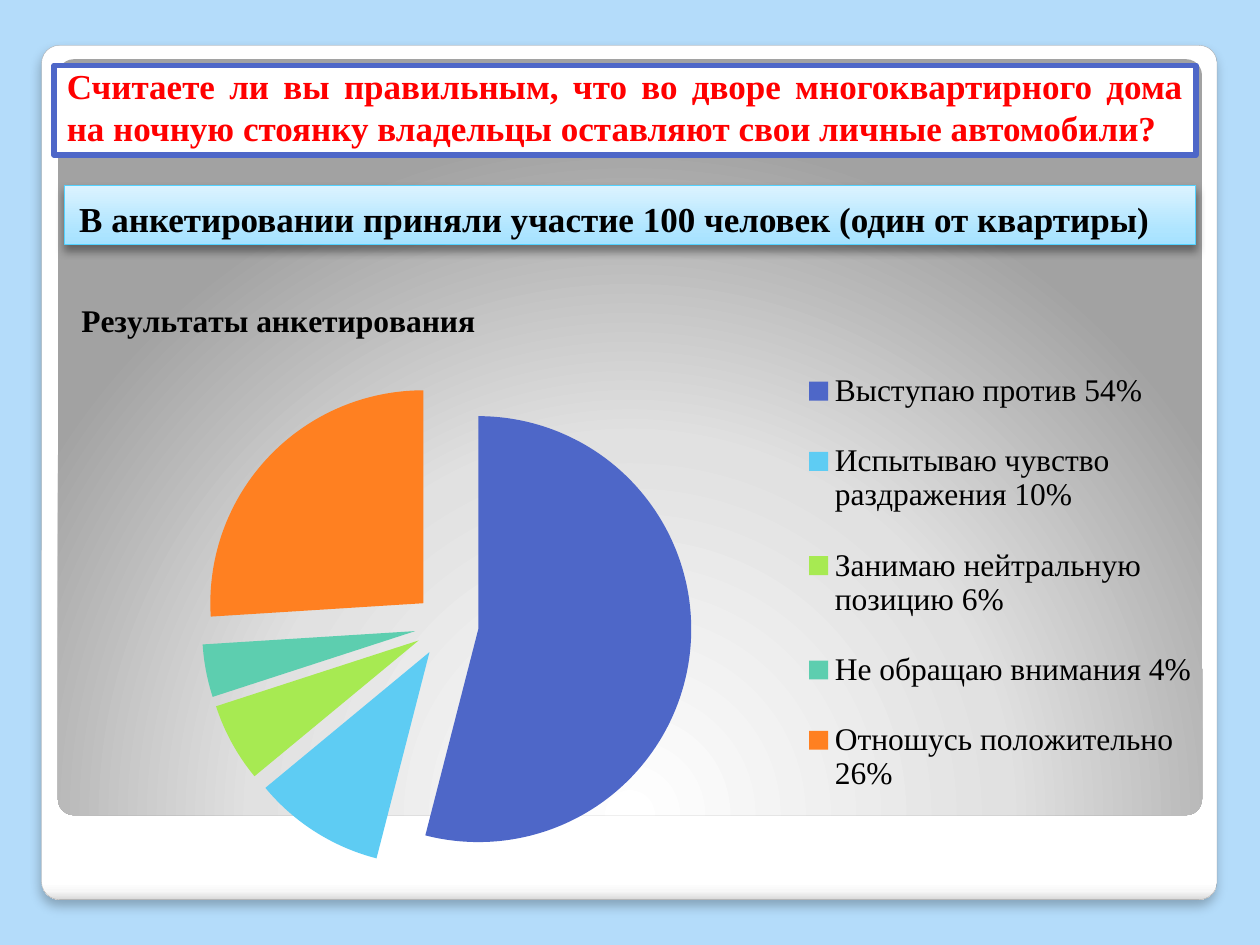
import pptx
import pptx.util
import pptx.chart.data
import pptx.dml.color
import pptx.enum.chart
import pptx.enum.shapes
import pptx.enum.text
import pptx.oxml
import pptx.oxml.ns
from pptx.util import Inches

TITLE = "Считаете ли вы правильным, что во дворе многоквартирного дома на ночную стоянку владельцы оставляют свои личные автомобили?"
NOTE = "В анкетировании приняли участие 100 человек (один от квартиры)"
HEAD = "Результаты анкетирования"
VOTES = [
    ("Выступаю против", 54, "4E67C8"),
    ("Испытываю чувство раздражения", 10, "5ECCF3"),
    ("Занимаю нейтральную позицию", 6, "A7EA52"),
    ("Не обращаю внимания", 4, "5DCEAF"),
    ("Отношусь положительно", 26, "FF8021"),
]
THEME = {
    "font": "Times New Roman", "big": 20, "mid": 18,
    "back": "B4DCFA", "white": "FFFFFF", "ink": "000000", "red": "FF0000",
    "frame": "4E67C8", "edge": "A4A4A4", "rim": "52D2FF",
    "card": [(0, "FFFFFF"), (98, "FFFFFF"), (99, "F7F7F7"), (100, "DADADA")],
    "glow": [(0, "FFFFFF"), (55, "E1E1E1"), (100, "A2A2A2")],
    "sky": [(0, "A6E2FF"), (25, "AFE5FF"), (100, "DCF3FF")],
}
NS = pptx.oxml.ns.nsdecls("a")
SHAPE = pptx.enum.shapes.MSO_SHAPE
ALIGN = pptx.enum.text.PP_ALIGN
ANCHOR = pptx.enum.text.MSO_ANCHOR


def rgb(name):
    return pptx.dml.color.RGBColor.from_string(THEME.get(name, name))


def style(font, size, color, bold=False):
    font.name, font.size, font.bold = THEME["font"], pptx.util.Pt(size), bold
    font.color.rgb = rgb(color)


def write(frame, text, size="big", color="ink", bold=True, align=ALIGN.LEFT,
          anchor=ANCHOR.TOP, top=0.05, indent=0):
    frame.word_wrap = True
    frame.auto_size = pptx.enum.text.MSO_AUTO_SIZE.NONE
    frame.vertical_anchor = anchor
    frame.margin_left = frame.margin_right = Inches(0.1)
    frame.margin_top, frame.margin_bottom = Inches(top), Inches(0.05)
    par = frame.paragraphs[0]
    par.alignment = align
    if indent:
        par._p.get_or_add_pPr().set("marL", str(Inches(indent)))
    run = par.add_run()
    run.text = text
    style(run.font, THEME[size], color, bold)


def place(shape, box):
    shape.left, shape.top, shape.width, shape.height = map(Inches, box)


def edge(shape, color, width):
    shape.line.color.rgb = rgb(color)
    shape.line.width = pptx.util.Pt(width)


def blend(shape, stops, way):
    shape.fill.solid()
    old = shape._element.spPr.find(pptx.oxml.ns.qn("a:solidFill"))
    marks = "".join(f'<a:gs pos="{pos * 1000}"><a:srgbClr val="{tone}"/></a:gs>'
                    for pos, tone in stops)
    new = pptx.oxml.parse_xml(
        f'<a:gradFill {NS} rotWithShape="1"><a:gsLst>{marks}</a:gsLst>{way}</a:gradFill>')
    old.getparent().replace(old, new)


def shade(shape, alpha, blur, dist):
    blur, dist = pptx.util.Pt(blur), pptx.util.Pt(dist)
    shape._element.spPr.find(pptx.oxml.ns.qn("a:effectLst")).append(pptx.oxml.parse_xml(
        f'<a:outerShdw {NS} blurRad="{blur}" dist="{dist}" dir="5400000" rotWithShape="0">'
        f'<a:srgbClr val="{THEME["ink"]}"><a:alpha val="{alpha * 1000}"/></a:srgbClr></a:outerShdw>'))


def panel(slide, kind, box, stops, way):
    shape = slide.shapes.add_shape(kind, *map(Inches, box))
    shape.shadow.inherit = False
    shape.line.fill.background()
    if kind == SHAPE.ROUNDED_RECTANGLE:
        shape.adjustments[0] = 0.021
    blend(shape, THEME[stops], way)
    return shape


def layout(item, x, y, wide=None, high=None, inner=False):
    old = item.find(pptx.oxml.ns.qn("c:layout"))
    if old is not None:
        item.remove(old)
    parts = [("xMode", "edge"), ("yMode", "edge"), ("x", x), ("y", y)]
    if inner:
        parts.insert(0, ("layoutTarget", "inner"))
    if wide:
        parts += [("w", wide), ("h", high)]
    body = "".join(f'<c:{tag} val="{val}"/>' for tag, val in parts)
    new = pptx.oxml.parse_xml(
        f'<c:layout {pptx.oxml.ns.nsdecls("c")}><c:manualLayout>{body}</c:manualLayout></c:layout>')
    spot = 0 if inner else 1
    item.insert(spot, new)


def pie(slide, box):
    data = pptx.chart.data.CategoryChartData()
    data.categories = [f"{name} {vote}%" for name, vote, tone in VOTES]
    data.add_series("Series 1", [vote for name, vote, tone in VOTES])
    kind = pptx.enum.chart.XL_CHART_TYPE.PIE
    chart = slide.shapes.add_chart(kind, *map(Inches, box), data).chart
    style(chart.font, THEME["mid"], "ink")

    chart.has_title = True
    write(chart.chart_title.text_frame, HEAD, size="mid")
    chart.chart_title.include_in_layout = False
    layout(chart.chart_title._element, 0.01, 0.02)

    chart.has_legend = True
    chart.legend.position = pptx.enum.chart.XL_LEGEND_POSITION.RIGHT
    chart.legend.include_in_layout = False
    style(chart.legend.font, THEME["mid"], "ink")
    layout(chart.legend._element, 0.64, 0.09, 0.36, 0.81)

    plot = chart.plots[0]
    plot.vary_by_categories = True
    layout(plot._element.getparent(), 0.02, 0.16, 0.63, 0.81, inner=True)
    line = plot.series[0]
    for num, (name, vote, tone) in enumerate(VOTES):
        fill = line.points[num].format.fill
        fill.solid()
        fill.fore_color.rgb = rgb(tone)
    burst = pptx.oxml.parse_xml(f'<c:explosion {pptx.oxml.ns.nsdecls("c")} val="15"/>')
    line._element.find(pptx.oxml.ns.qn("c:dPt")).addprevious(burst)


def main():
    deck = pptx.Presentation()
    deck.slide_width, deck.slide_height = Inches(10), Inches(7.5)
    slide = deck.slides.add_slide(deck.slide_layouts[5])
    slide.background.fill.solid()
    slide.background.fill.fore_color.rgb = rgb("back")

    card = panel(slide, SHAPE.ROUNDED_RECTANGLE, (0.33, 0.36, 9.33, 6.78), "card",
                 '<a:lin ang="5400000" scaled="0"/>')
    edge(card, "edge", 0.16)
    shade(card, 25, 6, 4)
    panel(slide, SHAPE.ROUNDED_RECTANGLE, (0.46, 0.47, 9.08, 6), "glow",
          '<a:path path="circle"><a:fillToRect l="50000" t="175000" r="50000" b="-75000"/></a:path>')

    title = slide.shapes.title
    slide.shapes._spTree.append(title._element)
    place(title, (0.43, 0.52, 9.06, 0.71))
    title.fill.solid()
    title.fill.fore_color.rgb = rgb("white")
    edge(title, "frame", 3.35)
    write(title.text_frame, TITLE, color="red", align=ALIGN.JUSTIFY, anchor=ANCHOR.BOTTOM)

    note = panel(slide, SHAPE.RECTANGLE, (0.51, 1.47, 8.98, 0.47), "sky",
                 '<a:lin ang="16200000" scaled="0"/>')
    edge(note, "rim", 0.75)
    shade(note, 40, 5.2, 3)
    write(note.text_frame, NOTE, top=0.1, indent=0.02)

    pie(slide, (0.51, 2.25, 9.06, 4.8))
    deck.save("out.pptx")


if __name__ == "__main__":
    main()
